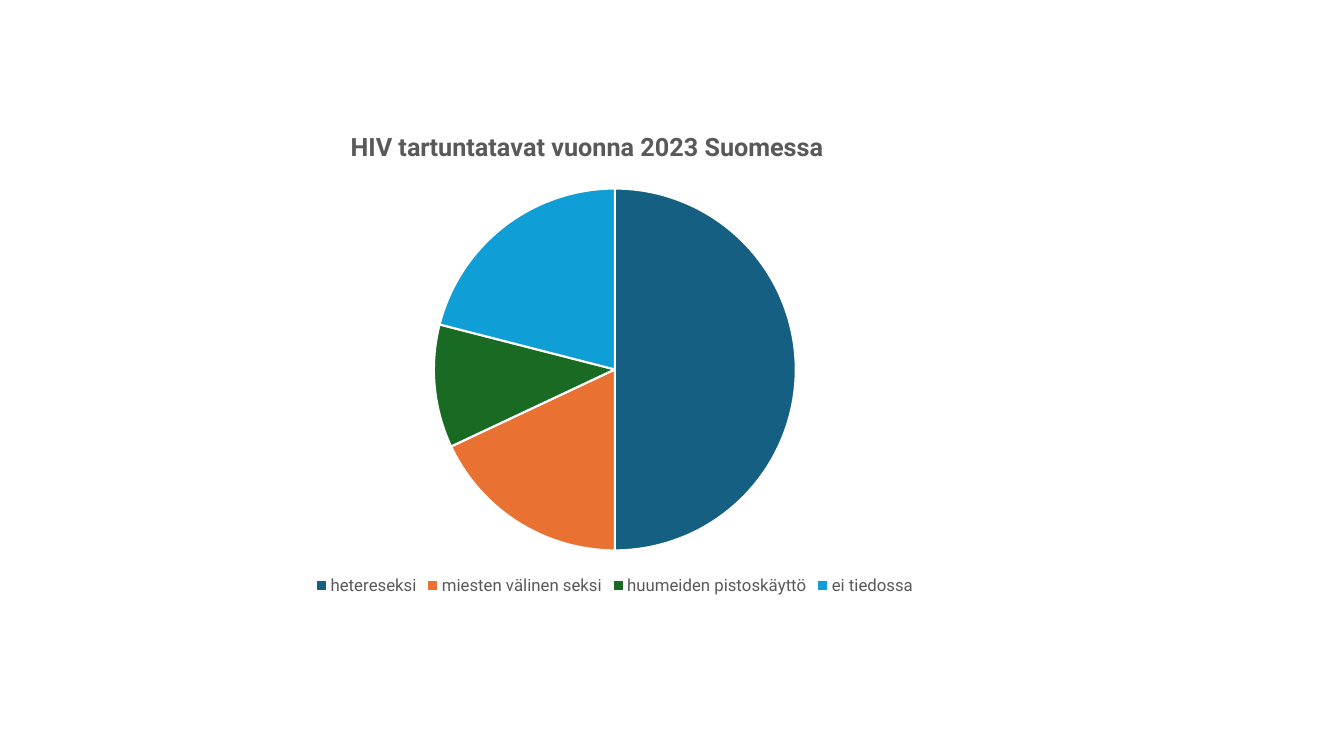
from lxml.etree import SubElement
from pptx import Presentation
from pptx.chart.data import CategoryChartData
from pptx.dml.color import RGBColor
from pptx.enum.chart import XL_CHART_TYPE, XL_LEGEND_POSITION
from pptx.oxml.ns import qn
from pptx.util import Pt

TITLE = "HIV tartuntatavat vuonna 2023 Suomessa"
SHARES = [
    ("hetereseksi", 50, "blue"),
    ("miesten välinen seksi", 18, "orange"),
    ("huumeiden pistoskäyttö", 11, "green"),
    ("ei tiedossa", 21, "sky"),
]
COLORS = {
    "blue": "156082",
    "orange": "E97132",
    "green": "196B24",
    "sky": "0F9ED5",
    "white": "FFFFFF",
    "gray": "595959",
    "black": "000000",
}
FONT = "Roboto"
LEFT, TOP, WIDTH, HEIGHT = 25.2, 85.7, 828, 342.7
PIE = 258.5
PIE_TOP = 49
TITLE_LEFT, TITLE_TOP = 222, 4


def color(name):
    return RGBColor.from_string(COLORS[name])


def style(font, size, name, bold=False):
    font.name = FONT
    font.size = Pt(size)
    font.bold = bold
    font.color.rgb = color(name)


def place(parent, index, **parts):
    for old in parent.findall(qn("c:layout")):
        parent.remove(old)
    layout = SubElement(parent, qn("c:layout"))
    parent.insert(index, layout)
    manual = SubElement(layout, qn("c:manualLayout"))
    for tag, value in parts.items():
        SubElement(manual, qn("c:" + tag)).set("val", str(value))


def build():
    deck = Presentation()
    deck.slide_width, deck.slide_height = Pt(960), Pt(540)
    slide = deck.slides.add_slide(deck.slide_layouts[6])

    data = CategoryChartData()
    data.categories = [label for label, share, fill in SHARES]
    data.add_series("Series 1", [share for label, share, fill in SHARES])
    frame = slide.shapes.add_chart(
        XL_CHART_TYPE.PIE, Pt(LEFT), Pt(TOP), Pt(WIDTH), Pt(HEIGHT), data)
    chart = frame.chart
    style(chart.font, 10, "black")

    chart.has_title = True
    title = chart.chart_title
    title.text_frame.text = TITLE
    style(title.text_frame.paragraphs[0].runs[0].font, 18, "gray", True)
    place(title._element, 1, xMode="edge", yMode="edge",
          x=TITLE_LEFT / WIDTH, y=TITLE_TOP / HEIGHT)

    chart.has_legend = True
    legend = chart.legend
    legend.position = XL_LEGEND_POSITION.BOTTOM
    legend.include_in_layout = False
    style(legend.font, 12, "gray")

    plot = chart.plots[0]
    plot.vary_by_categories = True
    for index, (label, share, fill) in enumerate(SHARES):
        slice_format = plot.series[0].points[index].format
        slice_format.fill.solid()
        slice_format.fill.fore_color.rgb = color(fill)
        slice_format.line.color.rgb = color("white")
        slice_format.line.width = Pt(1.5)
    area = chart.element.find(".//" + qn("c:plotArea"))
    place(area, 0, layoutTarget="inner", xMode="edge", yMode="edge",
          x=(WIDTH - PIE) / 2 / WIDTH, y=PIE_TOP / HEIGHT,
          w=PIE / WIDTH, h=PIE / HEIGHT)

    deck.save("out.pptx")


if __name__ == "__main__":
    build()
